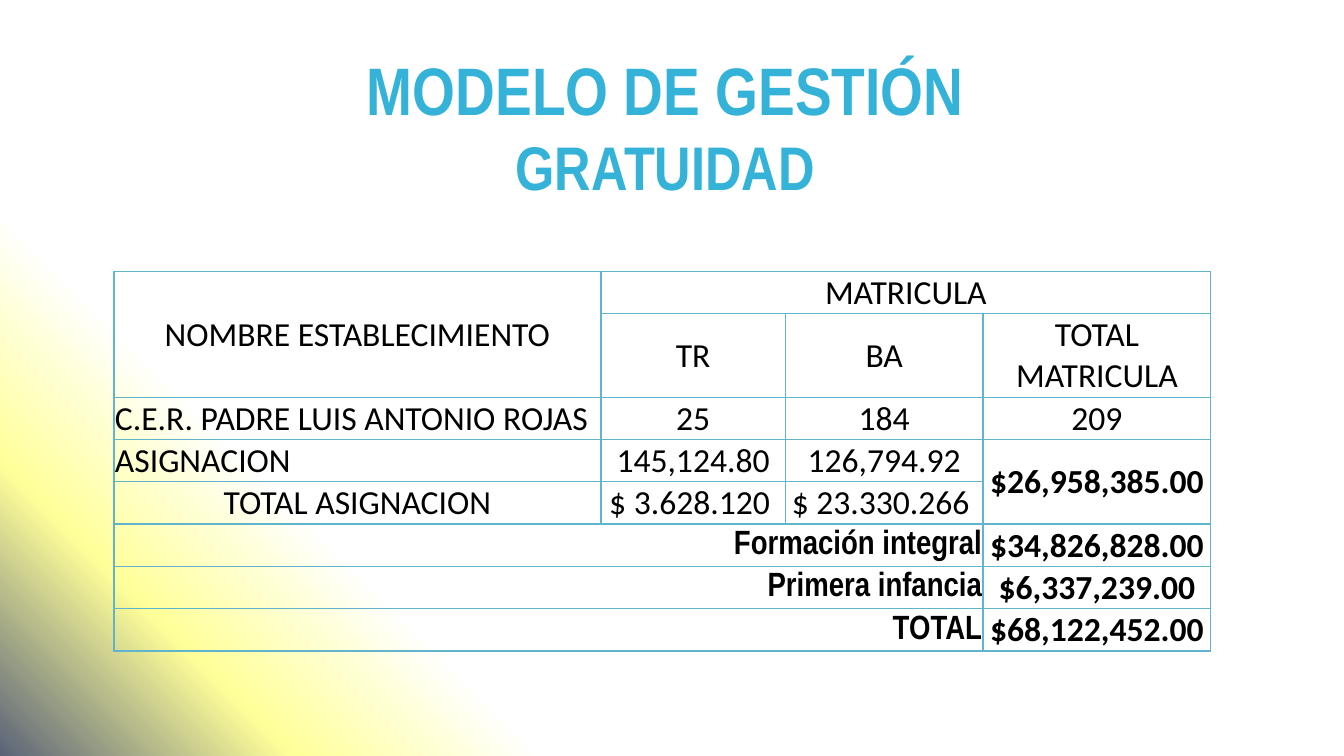
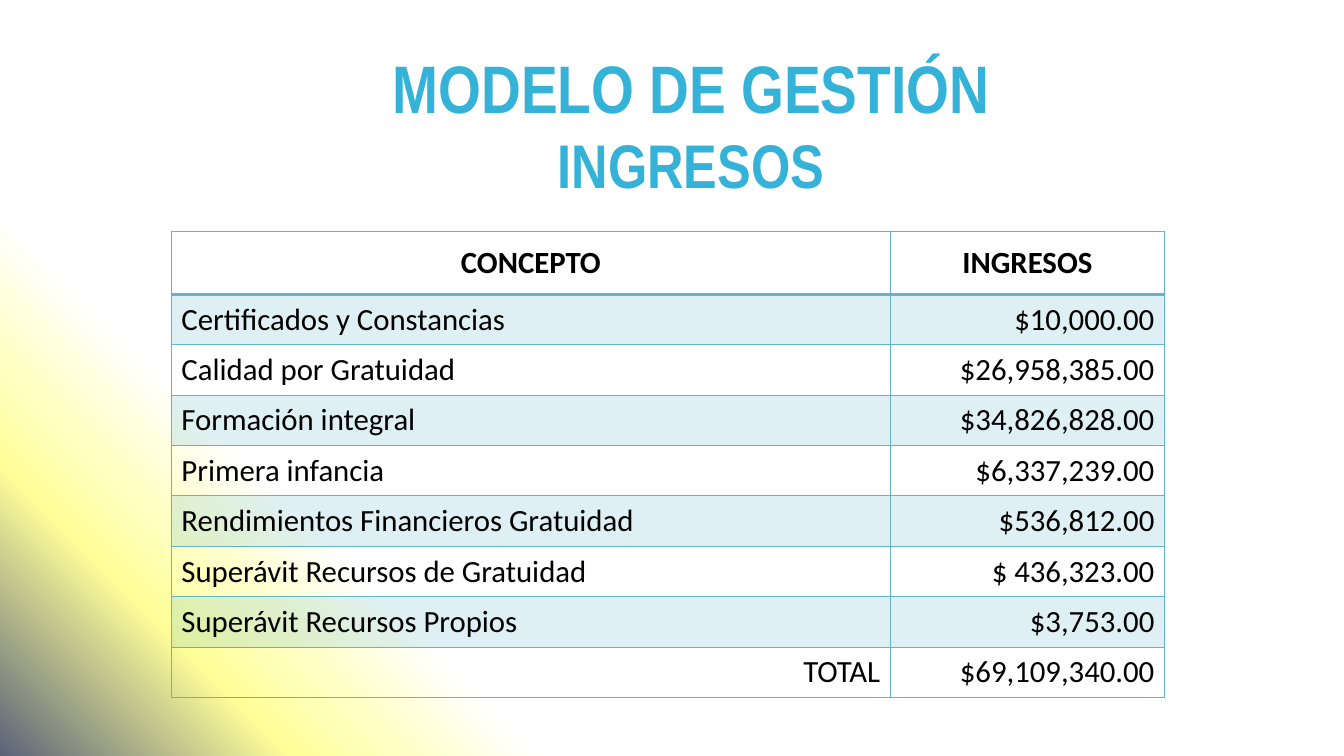
from lxml import etree
from pptx import Presentation
from pptx.dml.color import RGBColor
from pptx.enum.text import MSO_ANCHOR, PP_ALIGN
from pptx.oxml import parse_xml
from pptx.oxml.ns import nsdecls, qn
from pptx.util import Inches, Pt

TITLE_BLUE = "35B2D7"
TABLE_BLUE = "60B5CC"
BLACK = "000000"
TITLE_FONT = "Arial Narrow"
BODY_FONT = "Calibri"
LEFT, CENTER, RIGHT = PP_ALIGN.LEFT, PP_ALIGN.CENTER, PP_ALIGN.RIGHT
BACKGROUND_STOPS = [(74, "FFFFFF"), (86, "FFFF99"), (100, "5A6378")]


def write(p, text, size=24, font=BODY_FONT, color=BLACK, bold=False, align=LEFT):
    p.alignment = align
    r = p.add_run()
    r.text = text
    r.font.size = Pt(size)
    r.font.name = font
    r.font.bold = bold
    r.font.color.rgb = RGBColor.from_string(color)


def add_grid(s, left, top, widths, heights, margins, header_rule=1):
    """Add an unfilled table with ruled cells; header_rule is the weight under row 0."""
    frame = s.shapes.add_table(len(heights), len(widths), Inches(left), Inches(top),
                               Inches(sum(widths)), Inches(sum(heights)))
    table = frame.table
    table.first_row = table.horz_banding = False
    for column, width in zip(table.columns, widths):
        column.width = Inches(width)
    for i, (row, height) in enumerate(zip(table.rows, heights)):
        row.height = Inches(height)
        weights = {"L": 1, "R": 1, "T": header_rule if i == 1 else 1,
                   "B": header_rule if i == 0 else 1}
        for cell in row.cells:
            (cell.margin_left, cell.margin_top,
             cell.margin_right, cell.margin_bottom) = map(Inches, margins)
            cell.vertical_anchor = MSO_ANCHOR.MIDDLE
            cell.fill.background()
            tc_pr = cell._tc.get_or_add_tcPr()
            for n, (side, weight) in enumerate(weights.items()):
                tc_pr.insert(n, parse_xml(
                    f'<a:ln{side} {nsdecls("a")} w="{Pt(weight)}"><a:solidFill>'
                    f'<a:srgbClr val="{TABLE_BLUE}"/></a:solidFill></a:ln{side}>'))
    return table


prs = Presentation()
prs.slide_width, prs.slide_height = Inches(13.33), Inches(7.5)

# Shared background and title style
stops = "".join(f'<a:gs pos="{pos * 1000}"><a:srgbClr val="{color}"/></a:gs>'
                for pos, color in BACKGROUND_STOPS)
slides = []
for subtitle, box in [("GRATUIDAD", (0.57, 0.69, 12.06, 1.11)),
                      ("INGRESOS", (1.19, 0.56, 11.33, 1.34))]:
    s = prs.slides.add_slide(prs.slide_layouts[6])
    s.background.fill.solid()
    bg_pr = s.background._cSld.bg.bgPr
    bg_pr.replace(bg_pr[0], parse_xml(
        f'<a:gradFill {nsdecls("a")} rotWithShape="1"><a:gsLst>{stops}</a:gsLst>'
        '<a:lin ang="8100000" scaled="0"/></a:gradFill>'))
    tf = s.shapes.add_textbox(*map(Inches, box)).text_frame
    tf.word_wrap = True
    tf.vertical_anchor = MSO_ANCHOR.MIDDLE
    title_style = dict(font=TITLE_FONT, color=TITLE_BLUE, bold=True, align=CENTER)
    write(tf.paragraphs[0], "MODELO DE GESTIÓN", size=48, **title_style)
    write(tf.add_paragraph(), subtitle, size=44, **title_style)
    slides.append(s)

# Slide 1: enrolment and allocation
enrolment = [
    ["NOMBRE ESTABLECIMIENTO", "MATRICULA", "", ""],
    ["", "TR", "BA", "TOTAL MATRICULA"],
    ["C.E.R. PADRE LUIS ANTONIO ROJAS", "25", "184", "209"],
    ["ASIGNACION", "145,124.80", "126,794.92", "$26,958,385.00"],
    ["TOTAL ASIGNACION", "$ 3.628.120", "$ 23.330.266", ""],
    ["Formación integral", "", "", "$34,826,828.00"],
    ["Primera infancia", "", "", "$6,337,239.00"],
    ["TOTAL", "", "", "$68,122,452.00"],
]
table = add_grid(slides[0], 1.13, 2.69, [4.83, 1.83, 1.96, 2.26],
                 [0.42, 0.83] + [0.42] * 6, (0.01, 0.01, 0.01, 0))
for first, last in [((0, 0), (1, 0)), ((0, 1), (0, 3)), ((3, 3), (4, 3)),
                    ((5, 0), (5, 2)), ((6, 0), (6, 2)), ((7, 0), (7, 2))]:
    table.cell(*first).merge(table.cell(*last))
for i, row in enumerate(enrolment):
    for j, text in enumerate(row):
        if not text:
            continue
        style = dict(align=CENTER, bold=i >= 5 or (i, j) == (3, 3))
        if j == 0 and i in (2, 3):
            style.update(align=LEFT)
        elif j == 0 and i >= 5:
            style.update(align=RIGHT, font=TITLE_FONT)
        write(table.cell(i, j).text_frame.paragraphs[0], text, **style)
for j in (1, 2):
    table.cell(4, j).margin_right = Inches(0.08)

# Slide 2: income
income = [
    ("CONCEPTO", "INGRESOS"),
    ("Certificados y Constancias", "$10,000.00"),
    ("Calidad por Gratuidad", "$26,958,385.00"),
    ("Formación integral", "$34,826,828.00"),
    ("Primera infancia", "$6,337,239.00"),
    ("Rendimientos Financieros Gratuidad", "$536,812.00"),
    ("Superávit Recursos de Gratuidad", "$ 436,323.00"),
    ("Superávit Recursos Propios", "$3,753.00"),
    ("TOTAL", "$69,109,340.00"),
]
table = add_grid(slides[1], 1.7, 2.3, [7.13, 2.72], [0.62] + [0.5] * 8,
                 (0.1, 0.05, 0.1, 0.05), header_rule=2)
for i, row in enumerate(income):
    for j, text in enumerate(row):
        cell = table.cell(i, j)
        align = CENTER if i == 0 else RIGHT if j == 1 or text == "TOTAL" else LEFT
        write(cell.text_frame.paragraphs[0], text, size=22, bold=i == 0, align=align)
        if i % 2:
            cell.fill.solid()
            cell.fill.fore_color.rgb = RGBColor.from_string(TABLE_BLUE)
            tint = cell._tc.tcPr.find(qn("a:solidFill"))[0]
            etree.SubElement(tint, qn("a:alpha"), val="20000")

prs.save("out.pptx")
